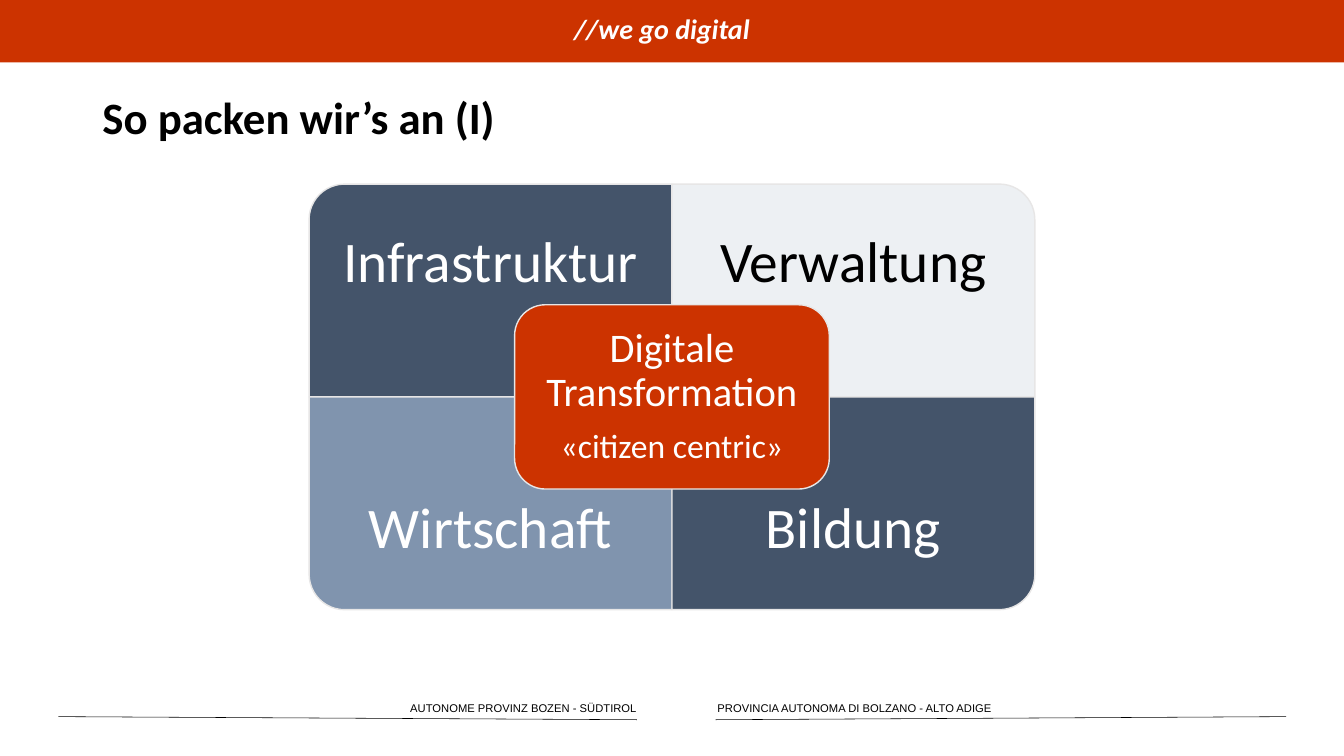
from lxml import etree
from pptx import Presentation
from pptx.dml.color import RGBColor
from pptx.enum import shapes as es, text as et
from pptx.oxml.ns import qn
from pptx.util import Pt

RED = RGBColor(0xCC, 0x33, 0x00)
NAVY = RGBColor(0x44, 0x54, 0x6A)
STEEL = RGBColor(0x80, 0x94, 0xAE)
PALE = RGBColor(0xED, 0xF0, 0xF3)
EDGE = RGBColor(0xE7, 0xE6, 0xE6)
WHITE = RGBColor(0xFF, 0xFF, 0xFF)
BLACK = RGBColor(0, 0, 0)
KIND = es.MSO_SHAPE
MID_X, MID_Y = 480, 283.5
CELL_W, CELL_H = 259.2, 152
TEXT_H = 114


def add_form(slide, kind, left, top, width, height, fill, edge=None):
    form = slide.shapes.add_shape(kind, Pt(left), Pt(top), Pt(width), Pt(height))
    form.shadow.inherit = False
    form.fill.solid()
    form.fill.fore_color.rgb = fill
    if edge is None:
        form.line.fill.background()
    else:
        form.line.color.rgb = edge
        form.line.width = Pt(1)
    return form


def set_font(para, size, color, name="Calibri", bold=False, italic=False):
    font = para.font
    font.name, font.size = name, Pt(size)
    font.bold, font.italic = bold, italic
    font.color.rgb = color


def set_frame(frame, left, top, right, bottom):
    frame.word_wrap = True
    frame.vertical_anchor = et.MSO_ANCHOR.MIDDLE
    frame.margin_left, frame.margin_top = Pt(left), Pt(top)
    frame.margin_right, frame.margin_bottom = Pt(right), Pt(bottom)


def add_label(slide, left, top, width, height, inset, lines, color):
    box = slide.shapes.add_textbox(Pt(left), Pt(top), Pt(width), Pt(height))
    frame = box.text_frame
    set_frame(frame, inset, inset, inset, inset)
    frame.text = "\n".join(words for words, size in lines)
    for para, (words, size) in zip(frame.paragraphs, lines):
        para.alignment = et.PP_ALIGN.CENTER
        para.line_spacing = 0.9
        set_font(para, size, color)
    for para in frame.paragraphs[:-1]:
        para.space_after = Pt(10)


def add_cell(slide, col, row, turn, words, fill, color):
    left = MID_X + (col - 1) * CELL_W
    top = MID_Y + (row - 1) * CELL_H
    width, height = (CELL_H, CELL_W) if turn % 180 else (CELL_W, CELL_H)
    form = add_form(slide, KIND.ROUND_1_RECTANGLE, left + (CELL_W - width) / 2,
                    top + (CELL_H - height) / 2, width, height, fill, EDGE)
    form.rotation = turn
    add_label(slide, left, top + row * (CELL_H - TEXT_H), CELL_W, TEXT_H, 23,
              [(words, 41)], color)


def add_core(slide):
    width, height = 224.8, 131.6
    left, top = MID_X - width / 2, MID_Y - height / 2
    add_form(slide, KIND.ROUNDED_RECTANGLE, left, top, width, height, RED, EDGE)
    add_label(slide, left + 6.4, top + 6.4, width - 12.8, height - 12.8, 8.6,
              [("Digitale Transformation", 29), ("«citizen centric»", 24)], WHITE)


def add_rule(slide, x1, y1, x2, y2):
    rule = slide.shapes.add_connector(es.MSO_CONNECTOR.STRAIGHT, Pt(x1), Pt(y1), Pt(x2), Pt(y2))
    rule.line.color.rgb = BLACK
    rule.line.width = Pt(0.4)
    etree.SubElement(rule._element.spPr, qn("a:effectLst"))


def add_foot(slide, left, width, words):
    box = slide.shapes.add_textbox(Pt(left), Pt(497.5), Pt(width), Pt(16.6))
    frame = box.text_frame
    frame.word_wrap = True
    frame.text = words
    para = frame.paragraphs[0]
    para.alignment = et.PP_ALIGN.CENTER
    set_font(para, 8, BLACK, "Arial")


def add_band(slide):
    band = add_form(slide, KIND.RECTANGLE, 0, 0, 960, 44.6, RED)
    frame = band.text_frame
    set_frame(frame, 0, 0, 14.4, 0)
    frame.text = "//we go digital"
    para = frame.paragraphs[0]
    para.alignment = et.PP_ALIGN.CENTER
    para.line_spacing = Pt(20)
    set_font(para, 20, WHITE, bold=True, italic=True)


def set_title(slide, words):
    title = slide.shapes.title
    title.left, title.top = Pt(66), Pt(65.5)
    title.width, title.height = Pt(828), Pt(40.3)
    frame = title.text_frame
    frame.text = words
    set_frame(frame, 7.2, 3.6, 7.2, 3.6)
    frame.auto_size = et.MSO_AUTO_SIZE.NONE
    para = frame.paragraphs[0]
    para.alignment = et.PP_ALIGN.LEFT
    para.line_spacing = 0.9
    set_font(para, 32, BLACK, bold=True)


def main():
    deck = Presentation()
    deck.slide_width, deck.slide_height = Pt(960), Pt(540)
    slide = deck.slides.add_slide(deck.slide_layouts[5])
    add_band(slide)
    add_rule(slide, 41.8, 511.9, 455, 514.1)
    add_foot(slide, 285.8, 176.4, "AUTONOME PROVINZ BOZEN - SÜDTIROL")
    add_foot(slide, 504, 213.1, "PROVINCIA AUTONOMA DI BOLZANO - ALTO ADIGE")
    add_rule(slide, 511.2, 514.1, 918.7, 511.9)
    set_title(slide, "So packen wir’s an (I)")
    add_cell(slide, 0, 0, 270, "Infrastruktur", NAVY, WHITE)
    add_cell(slide, 1, 0, 0, "Verwaltung", PALE, BLACK)
    add_cell(slide, 0, 1, 180, "Wirtschaft", STEEL, WHITE)
    add_cell(slide, 1, 1, 90, "Bildung", NAVY, WHITE)
    add_core(slide)
    deck.save("out.pptx")


if __name__ == "__main__":
    main()
